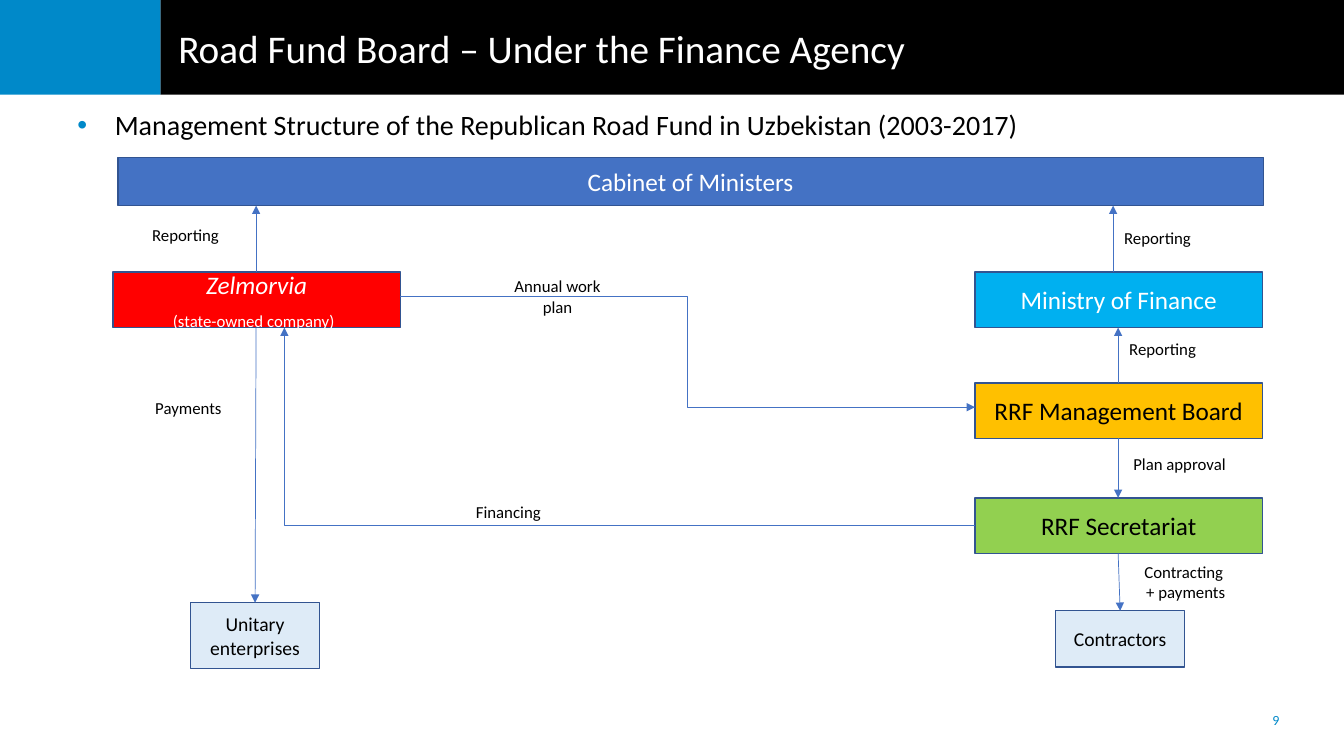
from lxml.etree import SubElement
from pptx import Presentation
from pptx.dml.color import RGBColor
from pptx.enum.shapes import MSO_CONNECTOR as Connector, MSO_SHAPE as Shape
from pptx.enum.text import MSO_ANCHOR as Anchor, PP_ALIGN as Align
from pptx.oxml.ns import qn
from pptx.util import Inches, Pt

BLACK = RGBColor(0x00, 0x00, 0x00)
WHITE = RGBColor(0xFF, 0xFF, 0xFF)
BRAND = RGBColor(0x00, 0x89, 0xC9)
BLUE = RGBColor(0x44, 0x72, 0xC4)
EDGE = RGBColor(0x32, 0x54, 0x91)
RED = RGBColor(0xFF, 0x00, 0x00)
CYAN = RGBColor(0x00, 0xB0, 0xF0)
AMBER = RGBColor(0xFF, 0xC0, 0x00)
GREEN = RGBColor(0x92, 0xD0, 0x50)
PALE = RGBColor(0xDE, 0xEB, 0xF7)

WIDTH, HEIGHT = 13.33, 7.5
HEADER_HEIGHT, HEADER_SPLIT = 0.94, 1.59
LEFT, RIGHT = 1.12, 9.67
ROWS = (2.7, 3.8, 4.94)
BOX = (2.85, 0.55)
LEFT_AXIS, RIGHT_AXIS = 2.54, 11.09
PADDING = (0.1, 0.05)

TITLE = "Road Fund Board – Under the Finance Agency"
SUBTITLE = "Management Structure of the Republican Road Fund in Uzbekistan (2003-2017)"
PAGE = "9"

BOXES = {
    "cabinet": ((1.17, 1.56, 11.36, 0.48), BLUE, WHITE, 18, "Cabinet of Ministers"),
    "company": ((LEFT, ROWS[0], *BOX), RED, WHITE, 18, ""),
    "ministry": ((RIGHT, ROWS[0], *BOX), CYAN, WHITE, 18, "Ministry of Finance"),
    "board": ((RIGHT, ROWS[1], *BOX), AMBER, BLACK, 18, "RRF Management Board"),
    "secretariat": ((RIGHT, ROWS[2], *BOX), GREEN, BLACK, 18, "RRF Secretariat"),
    "enterprises": ((1.89, 5.98, 1.28, 0.65), PALE, BLACK, 14, "Unitary enterprises"),
    "contractors": ((10.47, 6.06, 1.28, 0.56), PALE, BLACK, 14, "Contractors"),
}
COMPANY_RUNS = (
    ("Zelmorvia", {"size": Pt(18), "italic": True}),
    ("(state-owned company)", {"size": Pt(12)}),
    (" ", {"size": Pt(18)}),
)
LABELS = (
    ((1.51, 2.23, 1.73, 0.28), Align.LEFT, "Reporting"),
    ((11.15, 2.26, 1.73, 0.28), Align.LEFT, "Reporting"),
    ((11.2, 3.36, 1.73, 0.29), Align.LEFT, "Reporting"),
    ((4.96, 2.74, 1.14, 0.51), Align.CENTER, "Annual work plan"),
    ((1.54, 3.95, 1.73, 0.28), Align.LEFT, "Payments"),
    ((11.24, 4.5, 1.14, 0.51), Align.LEFT, "Plan approval"),
    ((4.72, 4.98, 1.14, 0.24), Align.LEFT, "Financing"),
    ((11.12, 5.57, 1.28, 0.49), Align.CENTER, "Contracting \n+ payments"),
)
VERTICAL_ARROWS = (
    ("company", "cabinet", LEFT_AXIS, LEFT_AXIS),
    ("ministry", "cabinet", 11.04, 11.04),
    ("board", "ministry", RIGHT_AXIS, RIGHT_AXIS),
    ("board", "secretariat", RIGHT_AXIS, RIGHT_AXIS),
    ("secretariat", "contractors", RIGHT_AXIS, 11.11),
    ("company", "enterprises", LEFT_AXIS, 2.53),
)
PLAN_ARROW = (LEFT + BOX[0], 2.94, RIGHT, 4.04)
FINANCING_ARROW = (2.82, ROWS[0] + BOX[1], RIGHT, 5.21)

presentation = Presentation()
presentation.slide_width, presentation.slide_height = Inches(WIDTH), Inches(HEIGHT)
slide = presentation.slides.add_slide(presentation.slide_layouts[6])


def apply(target, values):
    for name, value in values.items():
        setattr(target, name, value)


def style_run(run, color, values):
    apply(run.font, {"name": "Calibri", **values})
    run.font.color.rgb = color


def write(shape, text, size, color, align=Align.LEFT, anchor=Anchor.TOP, padding=(0, 0)):
    across, down = map(Inches, padding)
    apply(shape.text_frame, {
        "word_wrap": True, "vertical_anchor": anchor,
        "margin_left": across, "margin_right": across,
        "margin_top": down, "margin_bottom": down, "text": text,
    })
    for paragraph in shape.text_frame.paragraphs:
        paragraph.alignment = align
        for run in paragraph.runs:
            style_run(run, color, {"size": Pt(size)})
    return shape


def add_text(area, *content, **layout):
    return write(slide.shapes.add_textbox(*map(Inches, area)), *content, **layout)


def add_box(area, fill, edge=None):
    shape = slide.shapes.add_shape(Shape.RECTANGLE, *map(Inches, area))
    shape.shadow.inherit = False
    shape.fill.solid()
    shape.fill.fore_color.rgb = fill
    if edge is None:
        shape.line.fill.background()
    else:
        shape.line.color.rgb = edge
        shape.line.width = Pt(1)
    return shape


def add_arrow(kind, points, arrowhead="tailEnd"):
    connector = slide.shapes.add_connector(kind, *map(Inches, points))
    connector.line.color.rgb = BLUE
    connector.line.width = Pt(0.5)
    SubElement(connector.line._get_or_add_ln(), qn(f"a:{arrowhead}"), type="triangle")
    SubElement(connector._element.spPr, qn("a:effectLst"))
    return connector


def add_bullet(paragraph, indent, color):
    properties = paragraph._p.get_or_add_pPr()
    properties.set("marL", str(Inches(indent)))
    properties.set("indent", str(-Inches(indent)))
    SubElement(SubElement(properties, qn("a:buClr")), qn("a:srgbClr"), val=str(color))
    SubElement(properties, qn("a:buFont"), typeface="Arial")
    SubElement(properties, qn("a:buChar"), char="•")


add_box((HEADER_SPLIT, 0, WIDTH - HEADER_SPLIT, HEADER_HEIGHT), BLACK)
add_box((0, 0, HEADER_SPLIT, HEADER_HEIGHT), BRAND)
add_text((1.67, 0.08, 11.66, 0.79), TITLE, 28, WHITE, anchor=Anchor.MIDDLE, padding=PADDING)
subtitle = add_text((0.67, 1.02, 12.66, 0.5), SUBTITLE, 20, BLACK, padding=PADDING)
add_bullet(subtitle.text_frame.paragraphs[0], 0.37, BRAND)
add_text((12.29, 6.95, 0.73, 0.39), PAGE, 10, BRAND,
         align=Align.CENTER, anchor=Anchor.MIDDLE, padding=PADDING)

boxes = {}
for name, (area, fill, color, size, text) in BOXES.items():
    boxes[name] = write(add_box(area, fill, EDGE), text, size, color, Align.CENTER, Anchor.MIDDLE)

company = boxes["company"].text_frame.paragraphs[0]
company.line_spacing = 1.07
for index, (text, values) in enumerate(COMPANY_RUNS):
    if index == 1:
        company.add_line_break()
    run = company.add_run()
    run.text = text
    style_run(run, WHITE, values)

for area, align, text in LABELS:
    add_text(area, text, 12, BLACK, align=align)

for source, target, start_x, end_x in VERTICAL_ARROWS:
    (_, top, _, height), (_, target_top, _, target_height) = BOXES[source][0], BOXES[target][0]
    if target_top > top:
        start_y, end_y = top + height, target_top
    else:
        start_y, end_y = top, target_top + target_height
    add_arrow(Connector.STRAIGHT, (start_x, start_y, end_x, end_y))

add_arrow(Connector.ELBOW, PLAN_ARROW)
financing = add_arrow(Connector.ELBOW, FINANCING_ARROW)
financing._element.spPr.find(qn("a:prstGeom")).set("prst", "bentConnector2")
financing._element.spPr.find(qn("a:xfrm")).set("rot", str(180 * 60000))

presentation.save("out.pptx")
